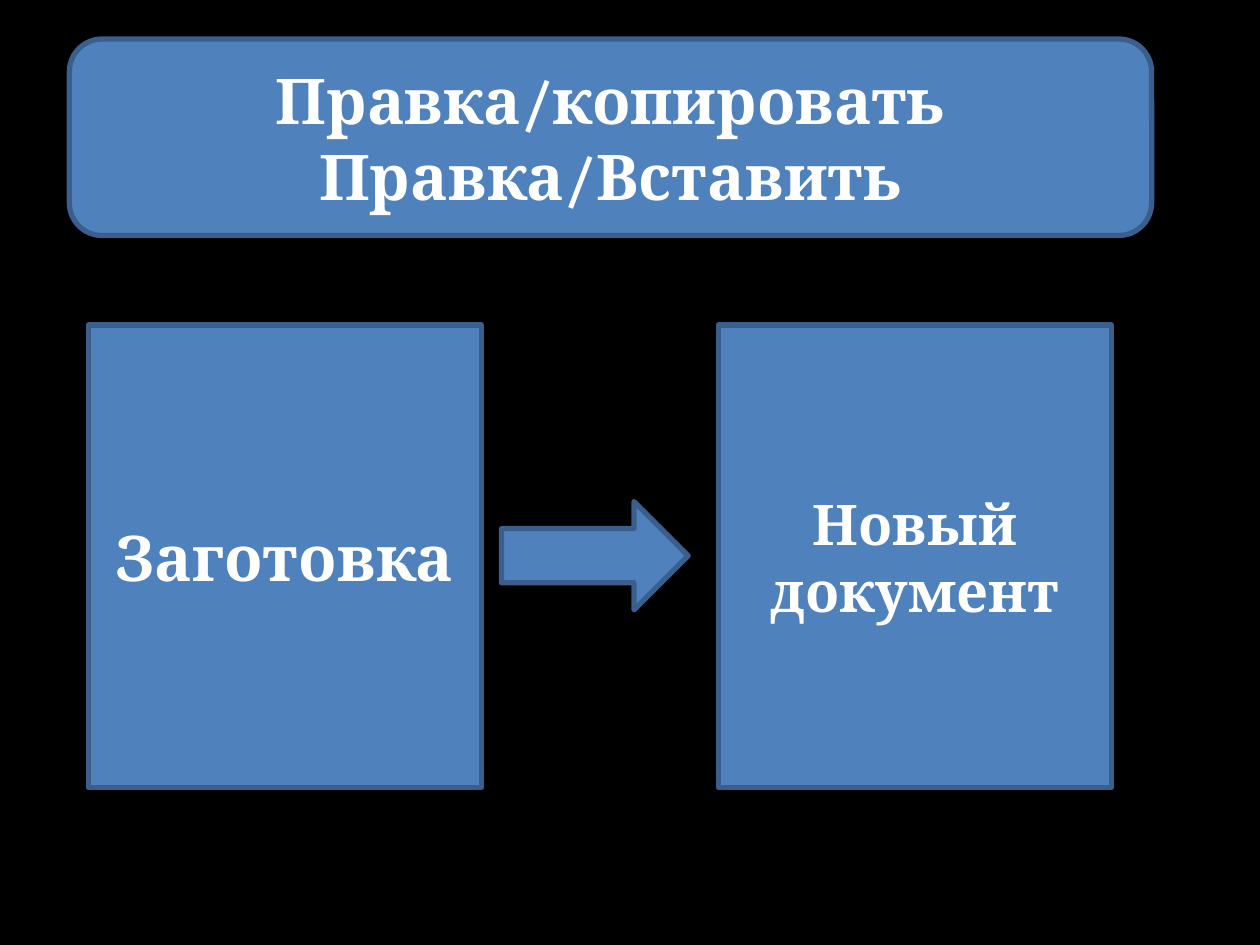
from pptx import Presentation
from pptx.dml.color import RGBColor
from pptx.enum.shapes import MSO_SHAPE
from pptx.enum.text import MSO_ANCHOR, MSO_AUTO_SIZE, PP_ALIGN
from pptx.util import Pt

BLACK = RGBColor(0x00, 0x00, 0x00)
WHITE = RGBColor(0xFF, 0xFF, 0xFF)
BLUE = RGBColor(0x4F, 0x81, 0xBD)
DARK_BLUE = RGBColor(0x3A, 0x5F, 0x8C)

BANNER = (39.6, 22.3, 618.5, 112.3)
DOCUMENT_TOP, DOCUMENT_WIDTH, DOCUMENT_HEIGHT = 185.8, 224.6, 264.2
DOCUMENTS = [("Заготовка", 50.4, 36), ("Новый документ", 410.4, 32)]
ARROW = (286.6, 286.6, 106.6, 61.9)


class SlideBuilder:
    font = "Cambria"
    line_width = 3

    def __init__(self, page):
        self.page = page
        page.background.fill.solid()
        page.background.fill.fore_color.rgb = BLACK

    def set_label(self, shape, text, size):
        frame = shape.text_frame
        frame.text = text
        frame.word_wrap = True
        frame.auto_size = MSO_AUTO_SIZE.NONE
        frame.vertical_anchor = MSO_ANCHOR.MIDDLE
        for para in frame.paragraphs:
            para.alignment = PP_ALIGN.CENTER
            for span in para.runs:
                span.font.name = self.font
                span.font.size = Pt(size)
                span.font.bold = True
                span.font.color.rgb = WHITE

    def block(self, kind, bounds):
        """Add a filled and outlined preset shape."""
        shape = self.page.shapes.add_shape(kind, *map(Pt, bounds))
        shape.shadow.inherit = False
        shape.fill.solid()
        shape.fill.fore_color.rgb = BLUE
        shape.line.color.rgb = DARK_BLUE
        shape.line.width = Pt(self.line_width)
        return shape

    def document(self, text, left, size):
        bounds = (left, DOCUMENT_TOP, DOCUMENT_WIDTH, DOCUMENT_HEIGHT)
        self.set_label(self.block(MSO_SHAPE.RECTANGLE, bounds), text, size)

    def title(self, text, bounds, size):
        """Set the title placeholder on top of a rounded banner."""
        banner = self.block(MSO_SHAPE.ROUNDED_RECTANGLE, bounds)
        title = self.page.shapes.title
        title.left, title.top, title.width, title.height = map(Pt, bounds)
        self.set_label(title, text, size)
        banner._element.addnext(title._element)


def main():
    deck = Presentation()
    deck.slide_width, deck.slide_height = Pt(720), Pt(540)
    title_only = deck.slide_layouts[5]
    builder = SlideBuilder(deck.slides.add_slide(title_only))
    for text, left, size in DOCUMENTS:
        builder.document(text, left, size)
    builder.block(MSO_SHAPE.RIGHT_ARROW, ARROW)
    builder.title("Правка/копировать\nПравка/Вставить", BANNER, 36)
    deck.save("out.pptx")


if __name__ == "__main__":
    main()
